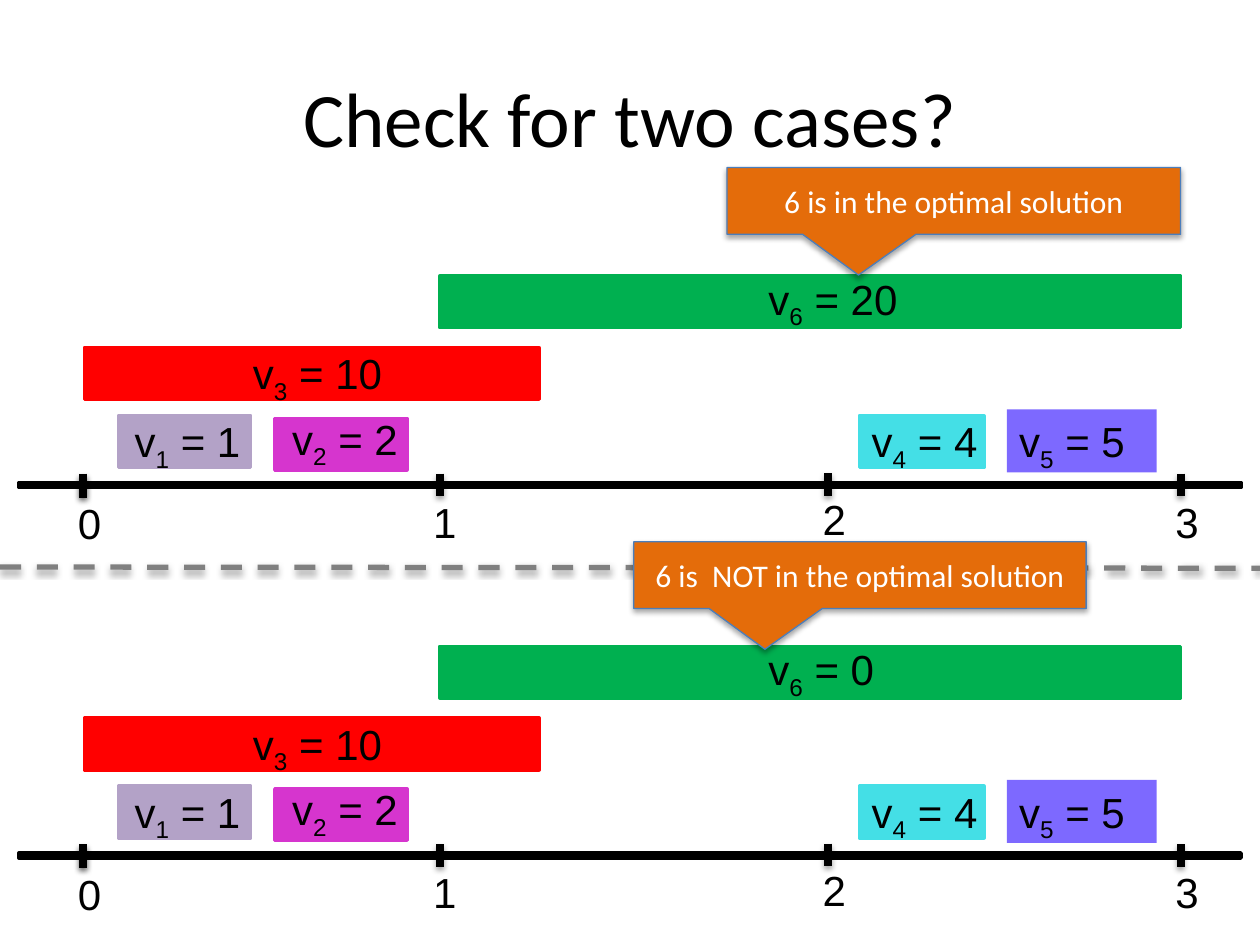
from lxml import etree
from pptx import Presentation
from pptx import util as u
from pptx.dml.color import RGBColor
from pptx.enum import dml, shapes, text
from pptx.oxml.ns import qn

BLACK = RGBColor(0x00, 0x00, 0x00)
WHITE = RGBColor(0xFF, 0xFF, 0xFF)
RED = RGBColor(0xFF, 0x00, 0x00)
GREEN = RGBColor(0x00, 0xB0, 0x50)
VIOLET = RGBColor(0x7D, 0x69, 0xFF)
LILAC = RGBColor(0xB3, 0xA2, 0xC7)
MAGENTA = RGBColor(0xD6, 0x35, 0xCE)
CYAN = RGBColor(0x44, 0xDF, 0xE6)
GRAY = RGBColor(0x80, 0x80, 0x80)
ORANGE = RGBColor(0xE4, 0x6C, 0x0A)
BLUE = RGBColor(0x4B, 0x7E, 0xBC)

COLS, ROWS = 100, 75
CASE_STEP = 29.4
BAR_H = 4.1

BARS = [
    (6.7, 27.6, 36.1, RED),
    (34.9, 21.9, 58.8, GREEN),
    (9.4, 33, 10.5, LILAC),
    (21.8, 33.2, 10.5, MAGENTA),
    (68.2, 33, 9.9, CYAN),
]
LABELS = [
    (19.1, 27.1, 14.4, "3", "10"),
    (9.7, 32.5, 12.1, "1", "1"),
    (22.2, 32.3, 12.1, "2", "2"),
    (68.2, 32.5, 11.2, "4", "4"),
]
TICKS = [(6.6, 37.6), (6.6, 37.7), (34.9, 37.6), (65.7, 37.55), (93.7, 37.6)]
NUMBERS = [(5.2, 39), (33.4, 38.9), (64.3, 38.7), (92.3, 38.9)]


class Deck:
    body_font, head_font = "Arial", "Calibri"

    def __init__(self):
        self.prs = Presentation()
        self.prs.slide_width, self.prs.slide_height = u.Inches(10), u.Inches(7.5)
        self.s = self.prs.slides.add_slide(self.prs.slide_layouts[6])
        self.target = self.s.shapes

    def place(self, *grid):
        units = self.prs.slide_width / COLS, self.prs.slide_height / ROWS
        return [round(v * units[i % 2]) for i, v in enumerate(grid)]

    def shadow(self, sp, alpha, dist):
        spPr = sp._element.spPr
        for old in spPr.findall(qn("a:effectLst")):
            spPr.remove(old)
        effects = etree.SubElement(spPr, qn("a:effectLst"))
        outer = etree.SubElement(
            effects, qn("a:outerShdw"), blurRad=str(u.Pt(3.1)),
            dist=str(u.Pt(dist)), dir="5400000", rotWithShape="0")
        color = etree.SubElement(outer, qn("a:srgbClr"), val=str(BLACK))
        etree.SubElement(color, qn("a:alpha"), val=str(alpha * 1000))

    def style(self, p, size, font, color):
        p.font.size, p.font.name, p.font.color.rgb = u.Pt(size), font, color

    def shape(self, kind, grid, fill, line=None, width=2):
        sp = self.target.add_shape(kind, *self.place(*grid))
        sp.shadow.inherit = False
        sp.fill.solid()
        sp.fill.fore_color.rgb = fill
        if line is None:
            sp.line.fill.background()
        else:
            sp.line.color.rgb, sp.line.width = line, u.Pt(width)
        return sp

    def bar(self, grid, fill, line=None):
        return self.shape(shapes.MSO_SHAPE.RECTANGLE, grid, fill, line)

    def line(self, grid, color, width, alpha=35, dist=1.8):
        ln = self.target.add_connector(
            shapes.MSO_CONNECTOR.STRAIGHT, *self.place(*grid))
        ln.line.color.rgb, ln.line.width = color, u.Pt(width)
        self.shadow(ln, alpha, dist)
        return ln

    def heading(self, grid, words):
        tf = self.target.add_textbox(*self.place(*grid)).text_frame
        self.centre(tf, words, 44, BLACK)

    def centre(self, tf, words, size, color):
        tf.word_wrap = True
        tf.vertical_anchor = text.MSO_ANCHOR.MIDDLE
        p = tf.paragraphs[0]
        p.text, p.alignment = words, text.PP_ALIGN.CENTER
        self.style(p, size, self.head_font, color)

    def label(self, grid, *parts, sp=None):
        sp = sp or self.target.add_textbox(*self.place(*grid))
        tf = sp.text_frame
        tf.word_wrap = True
        tf.auto_size = text.MSO_AUTO_SIZE.SHAPE_TO_FIT_TEXT
        tf.vertical_anchor = text.MSO_ANCHOR.TOP
        p = tf.paragraphs[0]
        p.alignment = text.PP_ALIGN.LEFT
        self.style(p, 24, self.body_font, BLACK)
        for i, part in enumerate(parts):
            r = p.add_run()
            r.text = part
            if i == 1:
                r._r.get_or_add_rPr().set("baseline", "-25000")

    def value(self, grid, index, amount, sp=None):
        self.label(grid, "v", index, f" = {amount}", sp=sp)

    def callout(self, grid, words):
        sp = self.shape(shapes.MSO_SHAPE.RECTANGULAR_CALLOUT, grid, ORANGE, BLUE, 0.75)
        sp.adjustments[0], sp.adjustments[1] = -0.21, 1.11
        self.shadow(sp, 35, 1.8)
        self.centre(sp.text_frame, words, 18, WHITE)

    def case(self, dy, v6):
        self.target = self.s.shapes.add_group_shape().shapes
        self.bar((1.5, 38.3 + dy, 97, 0.4), BLACK, BLACK)
        for x, y, w, color in BARS:
            self.bar((x, y + dy, w, BAR_H), color, color)
        for x, y, w, index, amount in LABELS:
            self.value((x, y + dy, w, 5), index, amount)
        self.value((60, 21.2 + dy, 13.2, 5), "6", v6)
        box = (79.9, 32.5 + dy, 11.9, 5)
        self.value(box, "5", "5", sp=self.bar(box, VIOLET))
        for x, y in TICKS:
            self.line((x, y + dy, x, y + dy + 1.8), BLACK, 4.5)
        for n, (x, y) in enumerate(NUMBERS):
            self.label((x, y + dy, 2.7, 3.8), str(n))
        self.target = self.s.shapes


def main():
    deck = Deck()
    deck.heading((5, 3, 90, 12.5), "Check for two cases?")
    deck.case(CASE_STEP, "0")
    deck.case(0, "20")
    divider = deck.line((0, 45, 100, 45.1), GRAY, 3, 38, 1.6)
    divider.line.dash_style = dml.MSO_LINE.DASH
    deck.callout((57.7, 13.3, 36, 5.3), "6 is in the optimal solution")
    deck.callout((50.3, 43, 35.9, 5.3), "6 is  NOT in the optimal solution")
    deck.prs.save("out.pptx")


if __name__ == "__main__":
    main()
